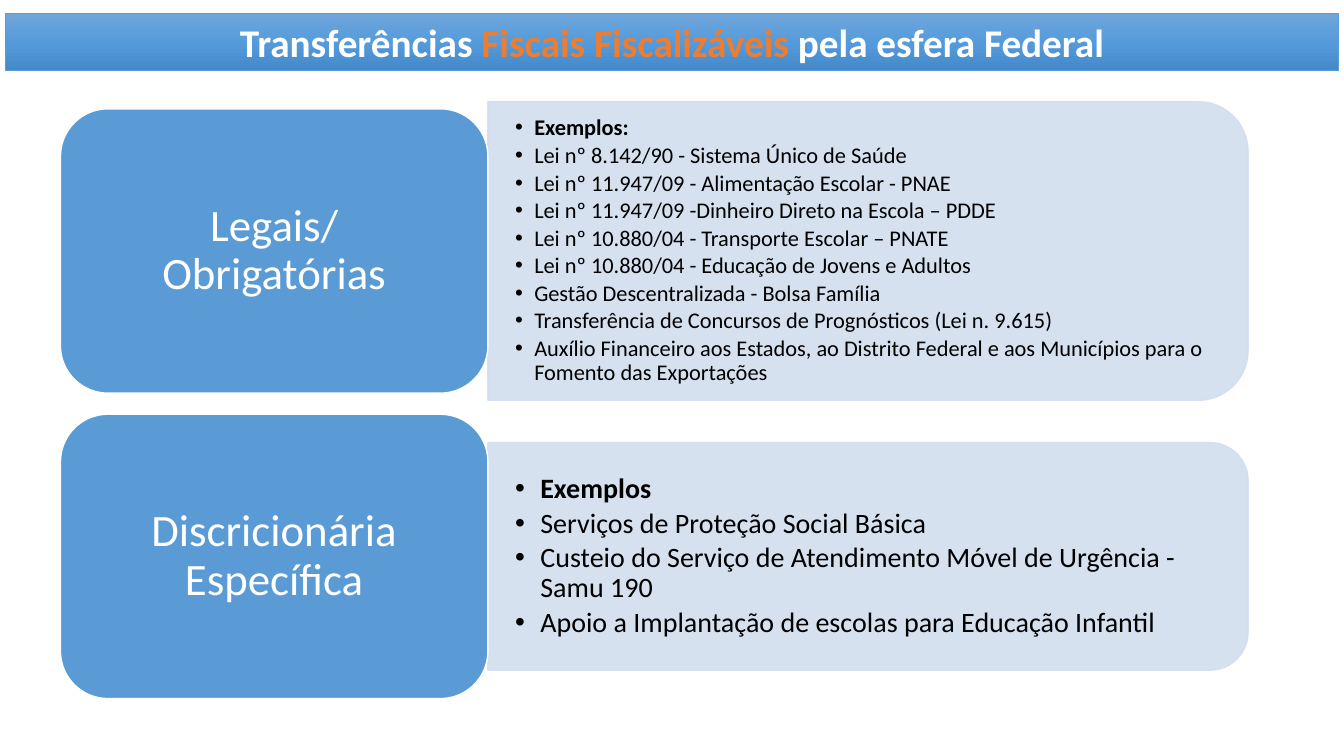
from copy import deepcopy

from lxml.etree import SubElement
from pptx import Presentation
from pptx.dml.color import RGBColor as RGB
from pptx.enum.shapes import MSO_SHAPE as SHAPE
from pptx.enum.text import MSO_ANCHOR as ANCHOR, PP_ALIGN as ALIGN
from pptx.oxml.ns import qn
from pptx.util import Inches, Pt

THEME = {
    "font": "Calibri", "title": 28, "card": 32,
    "blue": "5B9BD5", "pale": "D2DEEF", "orange": "ED7D31",
    "white": "FFFFFF", "black": "000000",
    "banner": ["71A6DB", "559BDB", "448ACA"],
}

deck = Presentation()
deck.slide_width, deck.slide_height = Inches(13.33), Inches(7.5)
slide = deck.slides.add_slide(deck.slide_layouts[6])
col, row = deck.slide_width / 100, deck.slide_height / 100  # 100 x 100 grid


def write(shape, paragraphs, size, align=ALIGN.LEFT, inset=(0.1, 0.05),
          spacing=1.0, after=0.0, bullet=0.0):
    """Each paragraph is a list of (text, colour, bold) runs."""
    frame = shape.text_frame
    frame.word_wrap, frame.vertical_anchor = True, ANCHOR.MIDDLE
    frame.margin_left = frame.margin_right = Inches(inset[0])
    frame.margin_top = frame.margin_bottom = Inches(inset[1])
    for i, runs in enumerate(paragraphs):
        paragraph = frame.add_paragraph() if i else frame.paragraphs[0]
        paragraph.alignment, paragraph.line_spacing = align, spacing
        paragraph.space_after = Pt(size * after)
        if bullet:
            props = paragraph._p.get_or_add_pPr()
            props.set("marL", str(Inches(bullet)))
            props.set("indent", str(-Inches(bullet)))
            SubElement(props, qn("a:buFont")).set("typeface", "Arial")
            SubElement(props, qn("a:buChar")).set("char", "•")
        for text, colour, bold in runs:
            run = paragraph.add_run()
            run.text = text
            run.font.name, run.font.size, run.font.bold = THEME["font"], Pt(size), bold
            run.font.color.rgb = RGB.from_string(THEME[colour])


def block(kind, left, top, width, height, fill, line, weight=1.0):
    shape = slide.shapes.add_shape(kind, *map(round, (left, top, width, height)))
    shape.shadow.inherit = False
    shape.fill.solid()
    shape.fill.fore_color.rgb = RGB.from_string(THEME[fill])
    shape.line.color.rgb = RGB.from_string(THEME[line])
    shape.line.width = Pt(weight)
    return shape


# Content: card label, panel height in rows, text size, bullet indent, examples
transfers = [
    ("Legais/Obrigatórias", 39.5, 16, 0.19, [
        "Exemplos:",
        "Lei nº 8.142/90 - Sistema Único de Saúde",
        "Lei nº 11.947/09 - Alimentação Escolar - PNAE",
        "Lei nº 11.947/09 -Dinheiro Direto na Escola – PDDE",
        "Lei nº 10.880/04 - Transporte Escolar – PNATE",
        "Lei nº 10.880/04 - Educação de Jovens e Adultos",
        "Gestão Descentralizada - Bolsa Família",
        "Transferência de Concursos de Prognósticos (Lei n. 9.615)",
        "Auxílio Financeiro aos Estados, ao Distrito Federal e aos Municípios"
        " para o Fomento das Exportações",
    ]),
    ("Discricionária Específica", 30.1, 20, 0.25, [
        "Exemplos",
        "Serviços de Proteção Social Básica",
        "Custeio do Serviço de Atendimento Móvel de Urgência - Samu 190",
        "Apoio a Implantação de escolas para Educação Infantil",
    ]),
]
card_left, card_top, card_width, card_height = 4.5 * col, 14.4 * row, 31.8 * col, 37.6 * row
card_pitch, panel_width = 40.4 * row, 56.56 * col
panel_left = card_left + card_width

for i, (label, panel_rows, size, indent, examples) in enumerate(transfers):
    top = card_top + i * card_pitch
    middle = top + card_height / 2
    panel_height = panel_rows * row

    # Panel: a shape with two round top corners, turned to face right
    panel = block(SHAPE.ROUND_2_SAME_RECTANGLE,
                  panel_left + (panel_width - panel_height) / 2, middle - panel_width / 2,
                  panel_height, panel_width, "pale", "pale")
    panel.rotation = 90
    for colour in panel._element.spPr.iter(qn("a:srgbClr")):
        SubElement(colour, qn("a:alpha")).set("val", "90000")

    # Examples, kept clear of the round corners
    corner = panel_height * 0.05
    examples_box = slide.shapes.add_textbox(
        *map(round, (panel_left, middle - panel_height / 2 + corner,
                     panel_width - corner, panel_height - 2 * corner)))
    write(examples_box, [[(text, "black", n == 0)] for n, text in enumerate(examples)],
          size, inset=(0.27, 0.14), spacing=0.9, after=0.15, bullet=indent)

    # Card
    card = block(SHAPE.ROUNDED_RECTANGLE, card_left, top, card_width, card_height,
                 "blue", "white")
    write(card, [[(label, "white", False)]], THEME["card"], ALIGN.CENTER,
          inset=(0.27, 0.2), spacing=0.9)

# Title banner with a three-stop gradient from top to bottom
banner = block(SHAPE.RECTANGLE, 0.4 * col, 1.75 * row, 99.2 * col, 7.6 * row,
               "blue", "blue", 0.5)
banner.fill.gradient()
banner.fill.gradient_angle = 270
stop_list = banner._element.spPr.find(".//" + qn("a:gsLst"))
stop_list.append(deepcopy(stop_list[-1]))
for i, (stop, colour) in enumerate(zip(banner.fill.gradient_stops, THEME["banner"])):
    stop.position = i / 2
    stop.color.rgb = RGB.from_string(colour)
write(banner, [[("Transferências ", "white", True),
                ("Fiscais Fiscalizáveis ", "orange", True),
                ("pela esfera Federal", "white", True)]], THEME["title"], ALIGN.CENTER)

deck.save("out.pptx")
